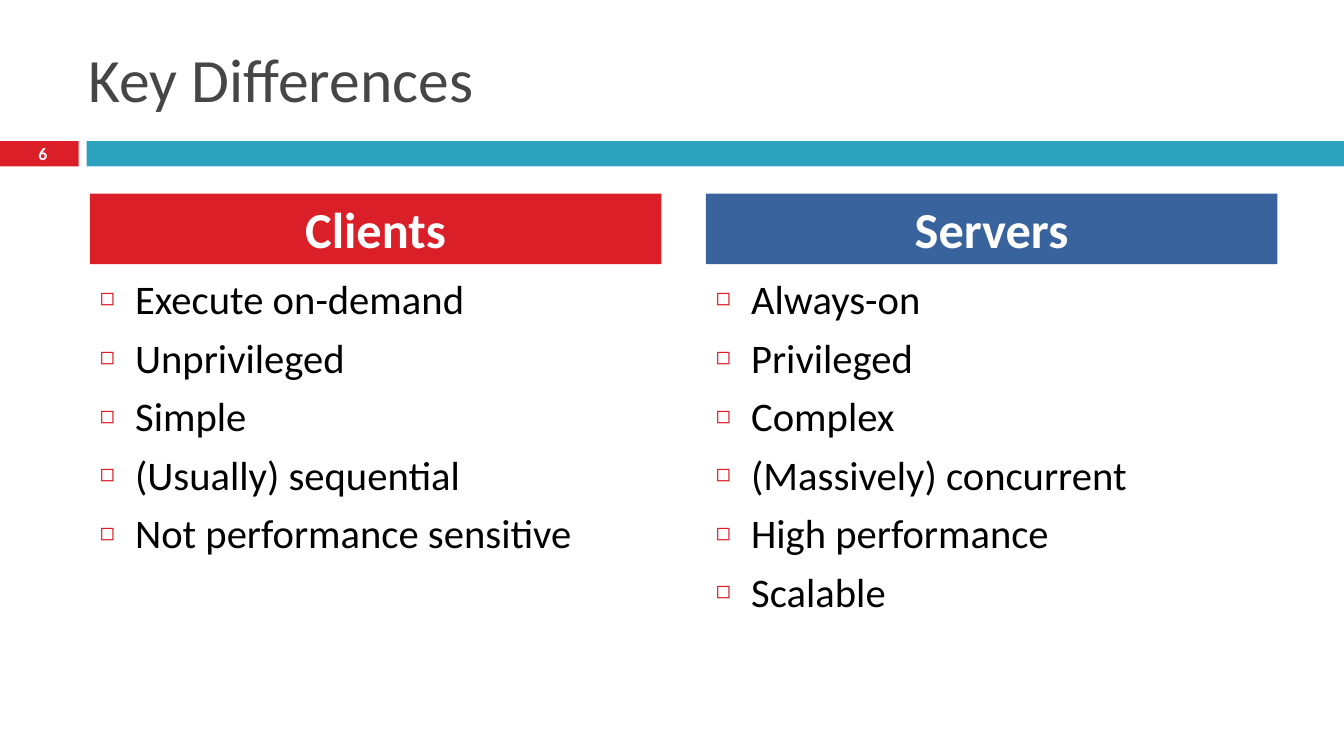
from lxml.etree import SubElement
from pptx import Presentation
from pptx.dml.color import RGBColor
from pptx.enum.shapes import MSO_SHAPE as Shape
from pptx.enum.text import MSO_ANCHOR as Anchor, MSO_AUTO_SIZE as AutoSize, PP_ALIGN as Align
from pptx.oxml.ns import qn
from pptx.util import Inches, Pt

TITLE = "Key Differences"
PAGE_NUMBER = "6"
RED, TEAL, BLUE = "DA1F28", "2DA2BF", "39639D"
COLUMNS = [
    ("Clients", RED, ["Execute on-demand", "Unprivileged", "Simple",
                      "(Usually) sequential", "Not performance sensitive"]),
    ("Servers", BLUE, ["Always-on", "Privileged", "Complex",
                       "(Massively) concurrent", "High performance", "Scalable"]),
]

WIDTH, HEIGHT = 13.33, 7.5
BAND_TOP, BAND_HEIGHT = 1.4, 0.25
NUMBER_WIDTH, BAND_LEFT = 0.78, 0.86
COLUMN_LEFT, COLUMN_WIDTH, COLUMN_STEP = 0.89, 5.67, 6.11
HEADING_TOP, HEADING_HEIGHT = 1.92, 0.7
LIST_TOP, LIST_HEIGHT = 2.67, 3.92
INDENT = 0.35

TITLE_FONT = {"size": Pt(44), "bold": False, "color": "464646"}
NUMBER_FONT = {"size": Pt(12.6), "bold": True, "color": "FFFFFF"}
HEADING_FONT = {"size": Pt(36), "bold": True, "color": "FFFFFF"}
LIST_FONT = {"size": Pt(29), "bold": False, "color": "000000"}


def rgb(color):
    return RGBColor.from_string(color)


def fill(shape, color):
    shape.fill.solid()
    shape.fill.fore_color.rgb = rgb(color)


def place(shape, *box):
    for name, inches in zip(("left", "top", "width", "height"), box):
        setattr(shape, name, Inches(inches))


def write(shape, lines, style, anchor=Anchor.MIDDLE, align=Align.LEFT, before=0):
    """Fill a shape with one formatted paragraph per line."""
    frame = shape.text_frame
    frame.text = "\n".join(lines)
    frame.word_wrap = True
    frame.auto_size = AutoSize.NONE
    frame.vertical_anchor = anchor
    for para in frame.paragraphs:
        para.alignment = align
        para.space_before = Pt(before)
        font = para.runs[0].font
        for name, value in {"name": "Calibri", **style}.items():
            if name == "color":
                font.color.rgb = rgb(value)
            else:
                setattr(font, name, value)


def add_bullet(para):
    props = para._p.get_or_add_pPr()
    props.set("marL", str(Inches(INDENT)))
    props.set("indent", str(-Inches(INDENT)))
    color = SubElement(props, qn("a:buClr"))
    SubElement(color, qn("a:srgbClr"), val=RED)
    SubElement(props, qn("a:buSzPct"), val="60000")
    SubElement(props, qn("a:buChar"), char="◻")


def add_band(page, left, width, color):
    band = page.shapes.add_shape(Shape.RECTANGLE, Inches(left), Inches(BAND_TOP),
                                 Inches(width), Inches(BAND_HEIGHT))
    band.shadow.inherit = False
    band.line.fill.background()
    fill(band, color)


def main():
    deck = Presentation()
    deck.slide_width, deck.slide_height = Inches(WIDTH), Inches(HEIGHT)
    page = deck.slides.add_slide(deck.slide_layouts.get_by_name("Comparison"))

    add_band(page, 0, NUMBER_WIDTH, RED)
    add_band(page, BAND_LEFT, WIDTH - BAND_LEFT, TEAL)
    number = page.shapes.add_textbox(0, 0, 0, 0)
    place(number, -0.01, 1.38, 0.87, 0.29)
    write(number, [PAGE_NUMBER], NUMBER_FONT, align=Align.CENTER)

    title, *bodies = page.placeholders
    place(title, 0.78, 0.3, 11.89, 0.95)
    write(title, [TITLE], TITLE_FONT)

    pairs = zip(bodies[::2], bodies[1::2])
    for index, ((heading, listing), (name, color, items)) in enumerate(zip(pairs, COLUMNS)):
        left = COLUMN_LEFT + index * COLUMN_STEP
        place(heading, left, HEADING_TOP, COLUMN_WIDTH, HEADING_HEIGHT)
        fill(heading, color)
        write(heading, [name], HEADING_FONT, align=Align.CENTER, before=7)
        place(listing, left, LIST_TOP, COLUMN_WIDTH, LIST_HEIGHT)
        write(listing, items, LIST_FONT, anchor=Anchor.TOP, before=7)
        for para in listing.text_frame.paragraphs:
            add_bullet(para)

    deck.save("out.pptx")


if __name__ == "__main__":
    main()
